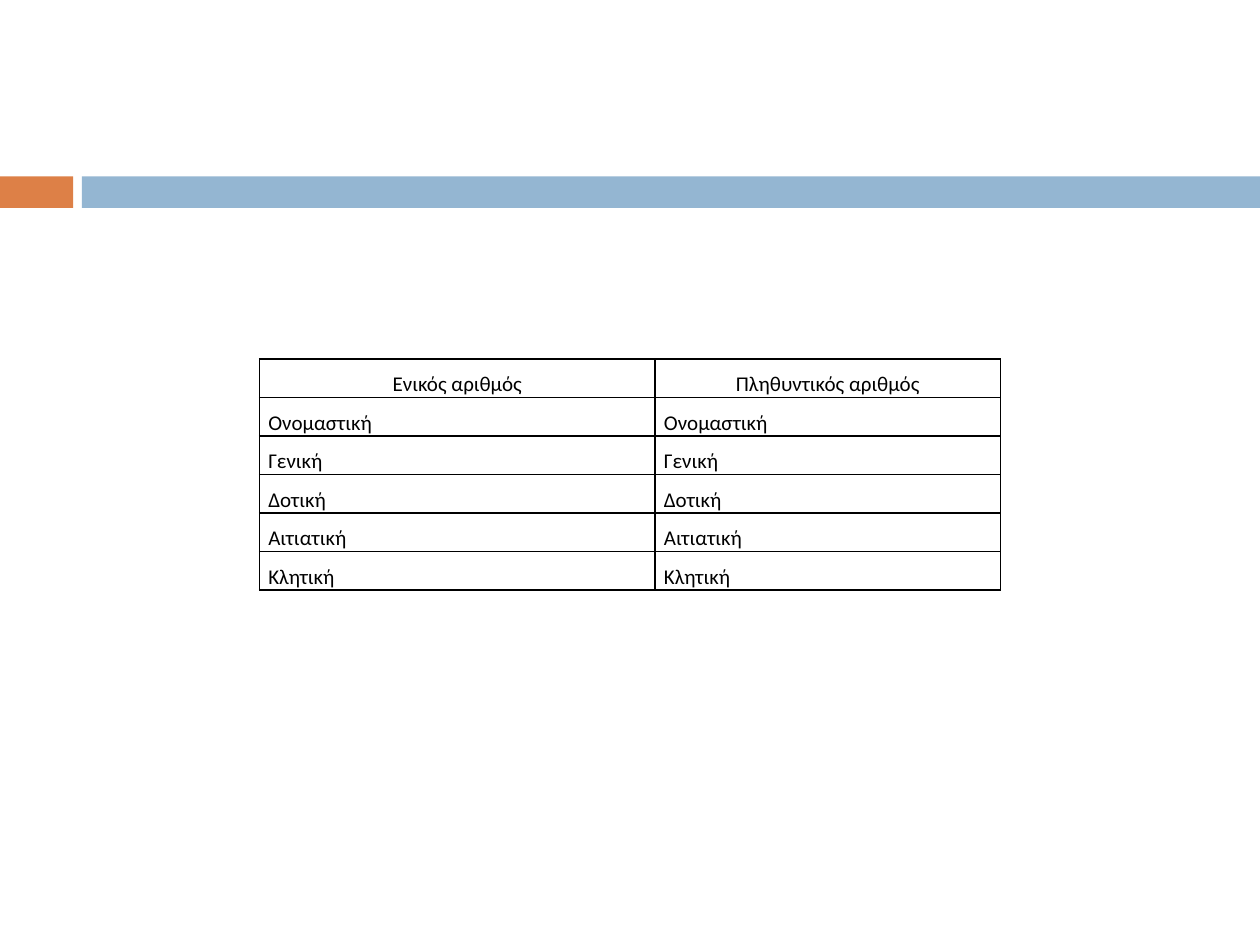
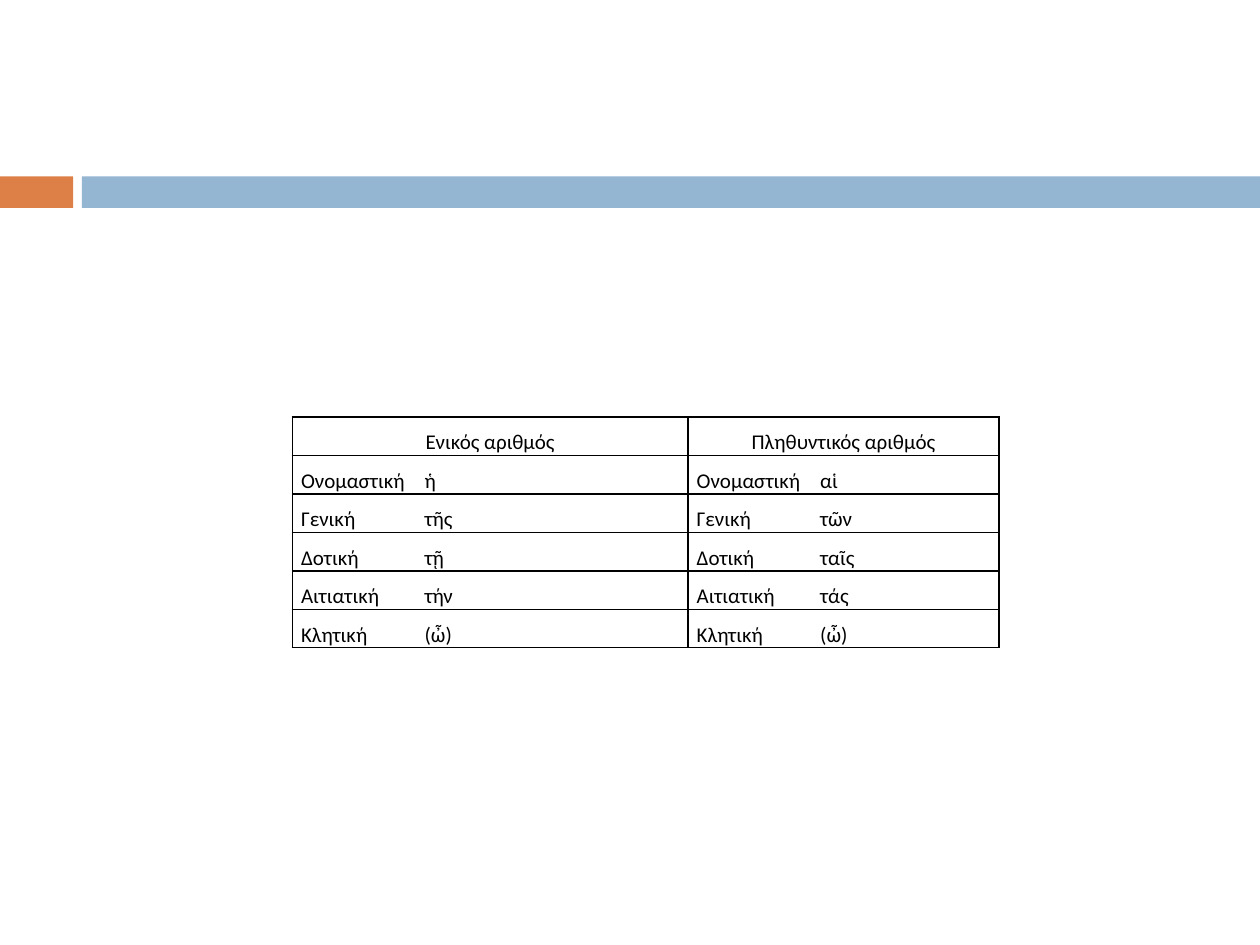
from dataclasses import dataclass

from lxml.etree import SubElement
from pptx import Presentation
from pptx.dml.color import RGBColor
from pptx.enum.shapes import MSO_SHAPE
from pptx.enum.text import PP_ALIGN
from pptx.oxml import parse_xml
from pptx.oxml.ns import nsdecls, qn
from pptx.util import Inches, Pt


@dataclass(frozen=True)
class Theme:
    """Colours, type and table measures shared by the slides."""
    accent: str = "DD8047"
    band: str = "94B6D2"
    ink: str = "000000"
    font: str = "Calibri"
    size: float = 12
    line_spacing: float = 1.5
    border: float = 1
    row_height: float = 0.3
    cell_inset: float = 0.07
    article_tab: float = 0.98


THEME = Theme()
HEADERS = ("Ενικός αριθμός", "Πληθυντικός αριθμός")
CASES = ("Ονομαστική", "Γενική", "Δοτική", "Αιτιατική", "Κλητική")
FEMININE_ARTICLES = (("ἡ", "αἱ"), ("τῆς", "τῶν"), ("τῇ", "ταῖς"),
                     ("τήν", "τάς"), ("(ὦ)", "(ὦ)"))


def add_band(slide, left, width, color):
    """Add one piece of the horizontal band."""
    sp = slide.shapes.add_shape(MSO_SHAPE.RECTANGLE, Inches(left), Inches(1.4),
                                Inches(width), Inches(0.25))
    sp.shadow.inherit = False
    sp.fill.solid()
    sp.fill.fore_color.rgb = RGBColor.from_string(color)
    sp.line.fill.background()


def add_banded_slide(prs):
    """Add a blank slide with the two-colour band."""
    slide = prs.slides.add_slide(prs.slide_layouts[6])
    add_band(slide, 0, 0.58, THEME.accent)
    add_band(slide, 0.65, 9.35, THEME.band)
    return slide


def set_borders(cell):
    """Draw a solid line on all four sides of a cell."""
    tc_pr = cell._tc.get_or_add_tcPr()
    for i, side in enumerate(("lnL", "lnR", "lnT", "lnB")):
        tc_pr.insert(i, parse_xml(
            f'<a:{side} {nsdecls("a")} w="{Pt(THEME.border)}"><a:solidFill>'
            f'<a:srgbClr val="{THEME.ink}"/></a:solidFill></a:{side}>'))


def add_tab_stop(p):
    """Give a paragraph the tab stop that lines up the articles."""
    tabs = SubElement(p._p.get_or_add_pPr(), qn("a:tabLst"))
    SubElement(tabs, qn("a:tab"), pos=str(Inches(THEME.article_tab)), algn="l")


def fill_cell(cell, text, align):
    """Write and style one table cell."""
    cell.margin_left = cell.margin_right = Inches(THEME.cell_inset)
    cell.margin_top = cell.margin_bottom = 0
    cell.fill.background()
    set_borders(cell)
    p = cell.text_frame.paragraphs[0]
    if "\t" in text:
        add_tab_stop(p)
    p.alignment = align
    p.line_spacing = THEME.line_spacing
    r = p.add_run()
    r.text = text
    r.font.name = THEME.font
    r.font.size = Pt(THEME.size)
    r.font.color.rgb = RGBColor.from_string(THEME.ink)


def add_case_table(slide, left, top, widths, rows):
    """Add a declension table with a centred header row."""
    rows = [HEADERS, *rows]
    table = slide.shapes.add_table(
        len(rows), len(widths), Inches(left), Inches(top),
        Inches(sum(widths)), Inches(THEME.row_height * len(rows))).table
    table.first_row = table.horz_banding = False
    for column, width in zip(table.columns, widths):
        column.width = Inches(width)
    for i, row in enumerate(rows):
        align = PP_ALIGN.JUSTIFY if i else PP_ALIGN.CENTER
        for j, text in enumerate(row):
            fill_cell(table.cell(i, j), text, align)


def main():
    """Build the two declension slides."""
    prs = Presentation()
    prs.slide_width, prs.slide_height = Inches(10), Inches(7.5)
    case_rows = [(case, case) for case in CASES]
    article_rows = [[f"{case}\t{article}" for article in pair]
                    for case, pair in zip(CASES, FEMININE_ARTICLES)]
    add_case_table(add_banded_slide(prs), 2.06, 2.85, (3.14, 2.74), case_rows)
    add_case_table(add_banded_slide(prs), 2.32, 3.31, (3.14, 2.47), article_rows)
    prs.save("out.pptx")


if __name__ == "__main__":
    main()
